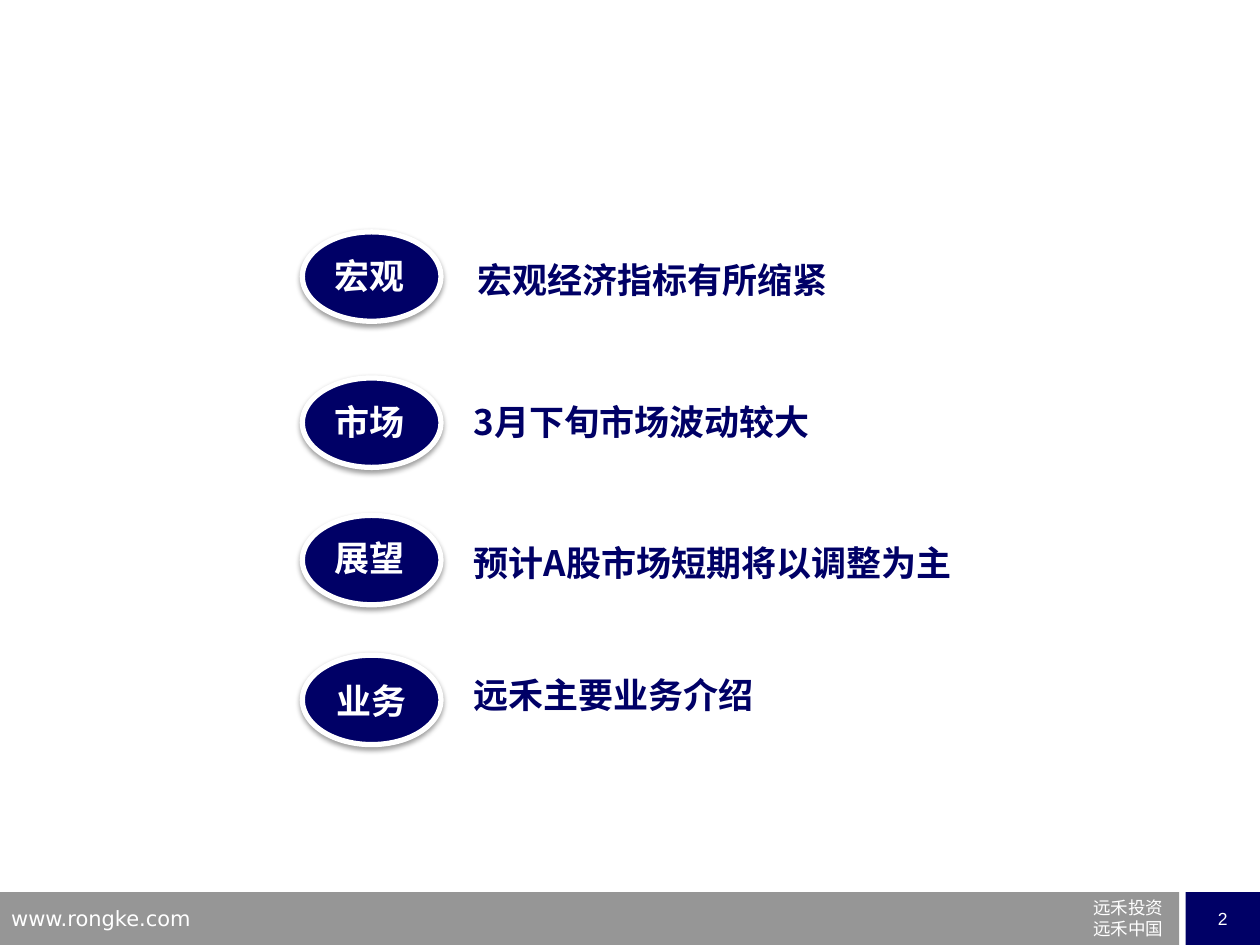
import pptx
import pptx.dml.color
import pptx.enum.shapes
import pptx.enum.text
import pptx.oxml.ns
import pptx.util
from lxml import etree
from pptx.util import Inches

COLORS = {"navy": "000066", "gray": "969696", "white": "FFFFFF", "shadow": "000000"}
HEADING_FONT = "Noto Sans CJK SC"
FOOTER_FONT = "DejaVu Sans"
SHAPES = pptx.enum.shapes.MSO_SHAPE
ALIGN = pptx.enum.text.PP_ALIGN

# label, topic, oval top, label left and top, topic left, top and width
AGENDA = [
    ("宏观", "宏观经济指标有所缩紧", 1.84, 2.56, 1.97, 3.69, 2.0, 3.86),
    ("市场", "3月下旬市场波动较大", 3.0, 2.56, 3.13, 3.66, 3.13, 3.86),
    ("展望", "预计A股市场短期将以调整为主", 4.09, 2.56, 4.21, 3.66, 4.25, 4.96),
    ("业务", "远禾主要业务介绍", 5.2, 2.57, 5.34, 3.66, 5.3, 4.96),
]


def rgb(color):
    return pptx.dml.color.RGBColor.from_string(COLORS[color])


def add_child(parent, tag, **attributes):
    return etree.SubElement(parent, pptx.oxml.ns.qn(tag), **attributes)


def write_text(frame, text, size, font, color, bold=False, align=ALIGN.LEFT):
    """Set the text and give Latin and East Asian letters the same font."""
    frame.text = text
    for paragraph in frame.paragraphs:
        paragraph.alignment = align
        for run in paragraph.runs:
            run.font.size = pptx.util.Pt(size)
            run.font.bold = bold
            run.font.color.rgb = rgb(color)
            run.font.name = font
            add_child(run.font._element, "a:ea", typeface=font)


def add_text(slide, box, text, size, font, color, **style):
    textbox = slide.shapes.add_textbox(*map(Inches, box))
    textbox.text_frame.word_wrap = True
    write_text(textbox.text_frame, text, size, font, color, **style)


def add_filled(slide, kind, box, color):
    shape = slide.shapes.add_shape(kind, *map(Inches, box))
    shape.fill.solid()
    shape.fill.fore_color.rgb = rgb(color)
    shape.line.fill.background()
    shape.shadow.inherit = False
    return shape


def add_oval(slide, top):
    """Add a navy oval with a white rim and a soft shadow below it."""
    oval = add_filled(slide, SHAPES.OVAL, (2.4, top, 1.1, 0.71), "navy")
    oval.line.color.rgb = rgb("white")
    oval.line.width = pptx.util.Pt(3)
    effects = oval._element.spPr.find(pptx.oxml.ns.qn("a:effectLst"))
    shadow = add_child(effects, "a:outerShdw", blurRad=str(pptx.util.Pt(3.1)),
                       dist=str(pptx.util.Pt(1.6)), dir="5400000", rotWithShape="0")
    shade = add_child(shadow, "a:srgbClr", val=COLORS["shadow"])
    add_child(shade, "a:alpha", val="38000")


def add_footer(slide):
    add_filled(slide, SHAPES.RECTANGLE, (0, 7.08, 9.36, 0.42), "gray")
    add_text(slide, (-0.01, 7.14, 2.41, 0.26), "www.rongke.com", 12, FOOTER_FONT, "white")
    add_text(slide, (8.21, 7.07, 1.12, 0.45), "远禾投资\n远禾中国", 10, FOOTER_FONT,
             "white", align=ALIGN.RIGHT)
    page = add_filled(slide, SHAPES.RECTANGLE, (9.41, 7.08, 0.59, 0.42), "navy")
    page.text_frame.word_wrap = False
    page.text_frame.vertical_anchor = pptx.enum.text.MSO_ANCHOR.MIDDLE
    write_text(page.text_frame, "2", 10, "Arial", "white", align=ALIGN.CENTER)


def add_agenda(slide):
    for label, topic, oval_top, label_left, label_top, left, top, width in AGENDA:
        add_oval(slide, oval_top)
        add_text(slide, (label_left, label_top, 0.79, 0.44), label, 20,
                 HEADING_FONT, "white", bold=True)
        add_text(slide, (left, top, width, 0.44), topic, 20,
                 HEADING_FONT, "navy", bold=True)


def main():
    deck = pptx.Presentation()
    deck.slide_width = Inches(10)
    deck.slide_height = Inches(7.5)
    slide = deck.slides.add_slide(deck.slide_layouts[6])
    add_footer(slide)
    add_agenda(slide)
    deck.save("out.pptx")


if __name__ == "__main__":
    main()
